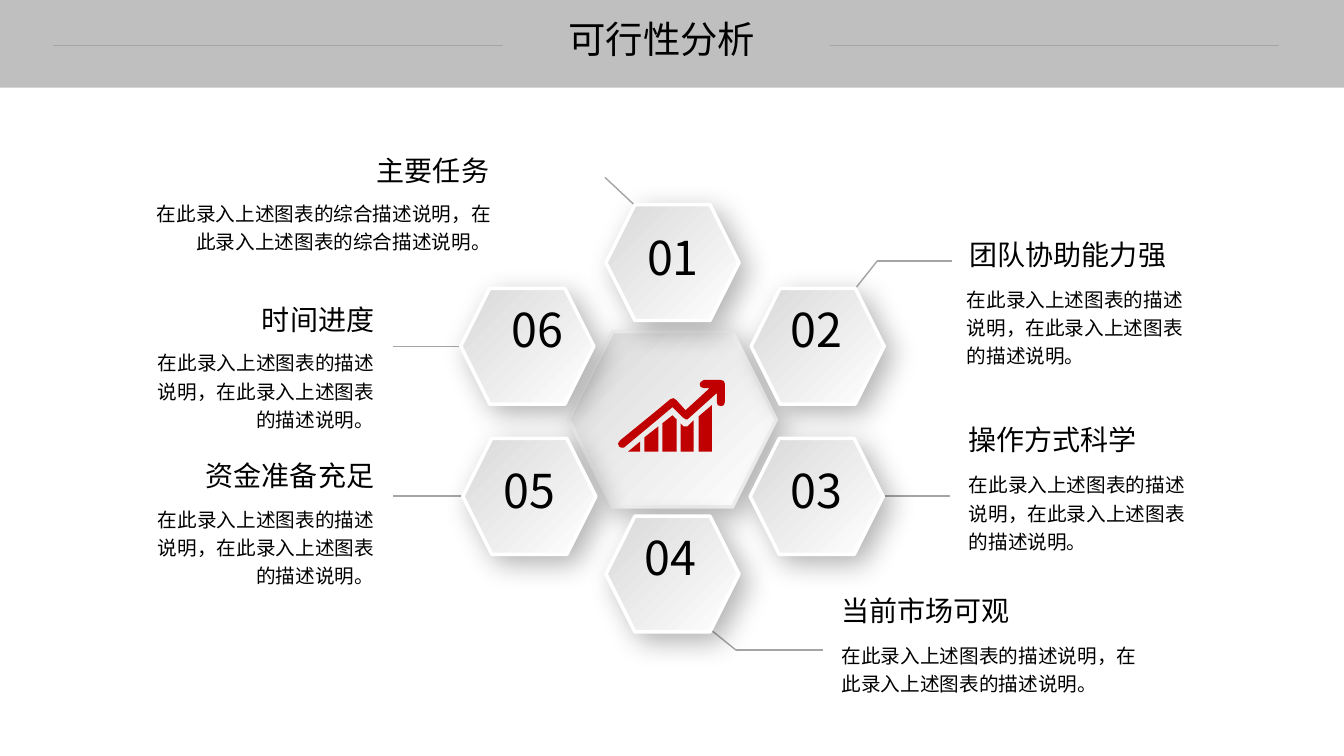
from dataclasses import dataclass

from lxml import etree
from pptx import Presentation
from pptx import util as u
from pptx.dml.color import RGBColor
from pptx.enum import shapes, text
from pptx.oxml.ns import qn

PX = 9144  # EMU per px, 100 px to the inch
FONT = "Noto Sans CJK SC"
BLACK, WHITE, RED = "000000", "FFFFFF", "C00000"
BAND, SILVER, RULE, CORE_EDGE = "BFBFBF", "D9D9D9", "A5A5A5", "EDEDED"
LEFT, CENTER, RIGHT = text.PP_ALIGN.LEFT, text.PP_ALIGN.CENTER, text.PP_ALIGN.RIGHT

DETAIL = "在此录入上述图表的描述说明，在此录入上述图表的描述说明。"
LONG_DETAIL = "在此录入上述图表的综合描述说明，在此录入上述图表的综合描述说明。"
HEX_WIDTH, HEX_HEIGHT = 132, 115


@dataclass
class Factor:
    """One hexagon with its number and caption; boxes are left, top, width, height."""
    number: str
    hexagon: tuple
    number_box: tuple
    number_spacing: float
    heading: str
    heading_box: tuple
    detail_box: tuple
    align: int
    detail: str = DETAIL


FACTORS = [
    Factor("02", (745, 286), (765, 305, 90, 61), 0.9,
           "团队协助能力强", (952, 234, 217, 40), (949, 276, 241, 95), LEFT),
    Factor("01", (601, 203), (619, 216, 97, 72), 1.2,
           "主要任务", (363, 151, 132, 40), (141, 191, 356, 67), RIGHT, LONG_DETAIL),
    Factor("03", (744, 435), (759, 447, 101, 72), 1.2,
           "操作方式科学", (951, 418, 188, 40), (951, 460, 241, 95), LEFT),
    Factor("05", (459, 435), (480, 447, 90, 72), 1.2,
           "资金准备充足", (193, 454, 188, 40), (145, 494, 236, 95), RIGHT),
    Factor("06", (457, 286), (477, 305, 112, 61), 0.9,
           "时间进度", (249, 299, 132, 40), (145, 339, 236, 95), RIGHT),
    Factor("04", (601, 512), (620, 531, 90, 61), 0.9,
           "当前市场可观", (825, 588, 188, 40), (825, 629, 319, 67), LEFT),
]

LEADERS = [
    [(942, 492), (875, 492)],
    [(704, 624), (730, 645), (816, 645)],
    [(459, 492), (390, 492)],
    [(457, 344), (390, 344)],
    [(631, 205), (600, 176)],
    [(847, 288), (870, 259), (944, 259)],
]

BAR_BOTTOM = 448
BAR_TOPS = [
    [(623, 448), (635, 438)],
    [(639, 434), (653, 423)],
    [(657, 420), (667, 412), (671, 416)],
    [(675, 420), (678, 423), (682, 423), (688, 417)],
    [(693, 413), (706, 402)],
]
TREND_ARROW = [
    (719, 381), (718, 378), (715, 377), (698, 377), (695, 379), (694, 381),
    (695, 384), (698, 385), (704, 385), (680, 407), (671, 397), (668, 395),
    (665, 396), (653, 406), (615, 437), (613, 440), (614, 443), (616, 444),
    (619, 444), (667, 404), (677, 414), (680, 416), (682, 416), (711, 390),
    (711, 399), (712, 402), (715, 403), (718, 402), (719, 399),
]


def color(hex_code):
    return RGBColor.from_string(hex_code)


def px(*lengths):
    return [u.Emu(length * PX) for length in lengths]


def add_band(slide, box):
    band = slide.shapes.add_shape(shapes.MSO_SHAPE.RECTANGLE, *px(*box))
    band.shadow.inherit = False
    band.fill.solid()
    band.fill.fore_color.rgb = color(BAND)
    band.line.fill.background()


def add_hexagon(slide, box, edge):
    """Hexagon shaded from silver to white, with a soft shadow to the lower right."""
    hexagon = slide.shapes.add_shape(shapes.MSO_SHAPE.HEXAGON, *px(*box))
    hexagon.adjustments[0] = 0.25
    hexagon.fill.gradient()
    hexagon.fill.gradient_angle = 315
    for stop, shade in zip(hexagon.fill.gradient_stops, (SILVER, WHITE)):
        stop.color.rgb = color(shade)
    hexagon.line.color.rgb = color(edge)
    hexagon.line.width = u.Pt(2.5)
    hexagon.shadow.inherit = False
    effects = hexagon._element.spPr.find(qn("a:effectLst"))
    shadow = etree.SubElement(
        effects, qn("a:outerShdw"), blurRad=str(u.Pt(20)), dist=str(u.Pt(8)),
        dir="2700000", algn="tl", rotWithShape="0")
    tint = etree.SubElement(shadow, qn("a:srgbClr"), val=BLACK)
    etree.SubElement(tint, qn("a:alpha"), val="30000")


def add_text(slide, box, words, size, align, spacing=None, inset=(0, 0), wrap=True):
    frame = slide.shapes.add_textbox(*px(*box)).text_frame
    frame.word_wrap = wrap
    frame.auto_size = text.MSO_AUTO_SIZE.SHAPE_TO_FIT_TEXT
    frame.margin_left = frame.margin_right = px(inset[0])[0]
    frame.margin_top = frame.margin_bottom = px(inset[1])[0]
    frame.text = words
    paragraph = frame.paragraphs[0]
    paragraph.alignment = align
    paragraph.line_spacing = spacing
    font = paragraph.runs[0].font
    font.size = u.Pt(size)
    font.name = FONT
    font.color.rgb = color(BLACK)
    etree.SubElement(font._element, qn("a:ea"), typeface=FONT)


def add_rule(slide, start, end, width):
    rule = slide.shapes.add_connector(
        shapes.MSO_CONNECTOR.STRAIGHT, *px(*start, *end))
    rule.line.color.rgb = color(RULE)
    rule.line.width = u.Pt(width)
    etree.SubElement(rule._element.spPr, qn("a:effectLst"))


def add_outline(group, points):
    builder = group.shapes.build_freeform(*points[0], scale=PX)
    builder.add_line_segments(points[1:], close=True)
    outline = builder.convert_to_shape()
    outline.shadow.inherit = False
    outline.fill.solid()
    outline.fill.fore_color.rgb = color(RED)
    outline.line.fill.background()


def add_growth_icon(slide):
    icon = slide.shapes.add_group_shape()
    for top in BAR_TOPS:
        add_outline(icon, top + [(top[-1][0], BAR_BOTTOM), (top[0][0], BAR_BOTTOM)])
    add_outline(icon, TREND_ARROW)


def add_factor(slide, factor):
    add_hexagon(slide, (*factor.hexagon, HEX_WIDTH, HEX_HEIGHT), WHITE)
    add_text(slide, factor.number_box, factor.number, 33.3, CENTER,
             factor.number_spacing)
    add_text(slide, factor.heading_box, factor.heading, 20, factor.align, 0.9,
             inset=(10, 5), wrap=False)
    add_text(slide, factor.detail_box, factor.detail, 14, factor.align, 1.2,
             inset=(10, 5))


def main():
    deck = Presentation()
    deck.slide_width, deck.slide_height = px(1333, 750)
    slide = deck.slides.add_slide(deck.slide_layouts[6])

    add_band(slide, (0, 0, 1333, 87))
    add_hexagon(slide, (564, 329, 206, 174), CORE_EDGE)
    add_growth_icon(slide)
    for leader in LEADERS:
        for start, end in zip(leader, leader[1:]):
            add_rule(slide, start, end, 1)
    for factor in FACTORS:
        add_factor(slide, factor)

    add_text(slide, (541, 16, 231, 55), "可行性分析", 26.7, CENTER)
    for left in (823, 53):
        add_rule(slide, (left, 45), (left + 446, 45), 0.75)

    deck.save("out.pptx")


if __name__ == "__main__":
    main()
